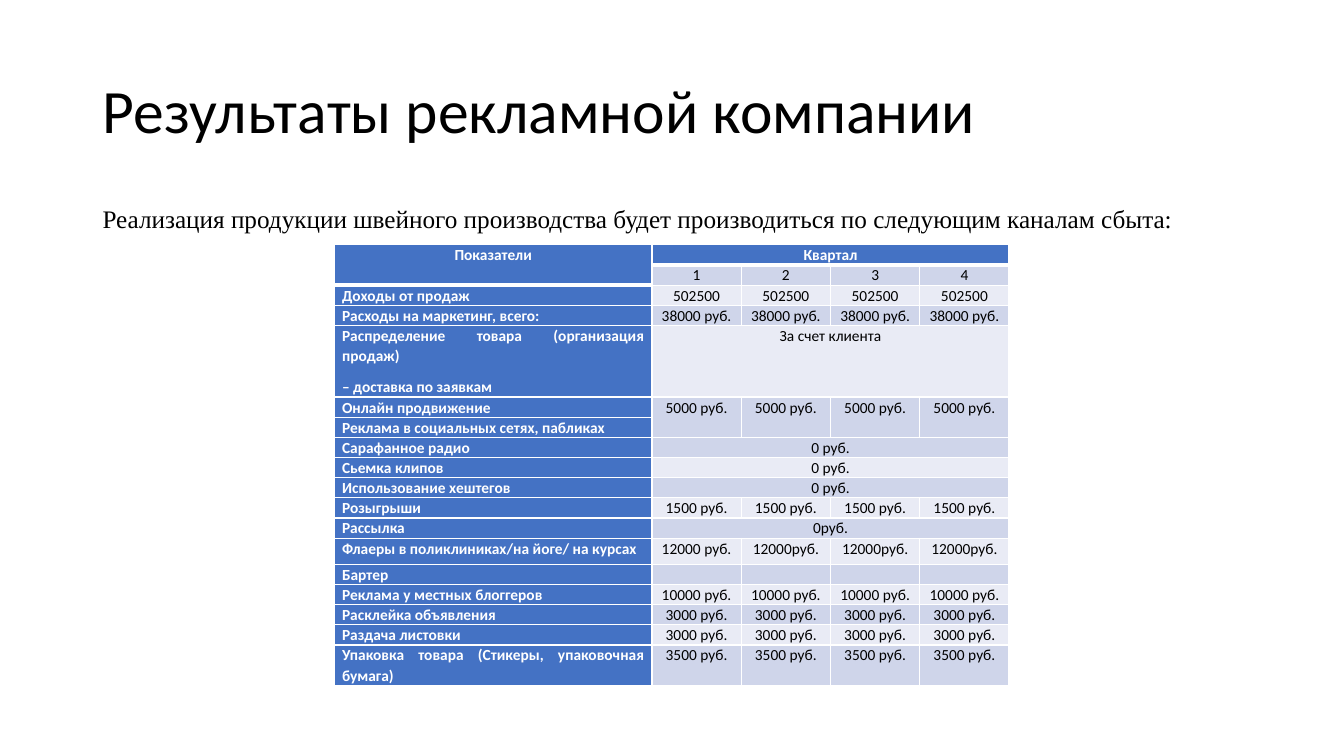
from lxml import etree
from pptx import Presentation
from pptx import util as u
from pptx.dml.color import RGBColor
from pptx.enum import text
from pptx.oxml import ns

WHITE, BLACK, BLUE = "FFFFFF", "000000", "4472C4"
BANDS = ("E9EBF5", "CFD5EA")
LEFT, CENTER, JUSTIFY = text.PP_ALIGN.LEFT, text.PP_ALIGN.CENTER, text.PP_ALIGN.JUSTIFY
QUARTERS = 4
ROW_HEIGHT = 0.5
TALL_ROWS = {4: 1.8, 12: 0.66, 17: 1}
CELL_PARAGRAPH = {"line_spacing": 1.06, "space_after": u.Pt(8)}
CELL_MARGINS = {"margin_left": u.Cm(0.19), "margin_right": u.Cm(0.19),
                "margin_top": 0, "margin_bottom": 0}

ROWS = [
    ("Показатели", ["Квартал"]),
    ("", ["1", "2", "3", "4"]),
    ("Доходы от продаж", ["502500"] * QUARTERS),
    ("Расходы на маркетинг, всего:", ["38000 руб."] * QUARTERS),
    ("Распределение товара (организация продаж)\n– доставка по заявкам", ["За счет клиента"]),
    ("Онлайн продвижение", ["5000 руб."] * QUARTERS),
    ("Реклама в социальных сетях, пабликах", []),
    ("Сарафанное радио", ["0 руб."]),
    ("Сьемка клипов", ["0 руб."]),
    ("Использование хештегов", ["0 руб."]),
    ("Розыгрыши", ["1500 руб."] * QUARTERS),
    ("Рассылка", ["0руб."]),
    ("Флаеры в поликлиниках/на йоге/ на курсах", ["12000 руб."] + ["12000руб."] * 3),
    ("Бартер", [""] * QUARTERS),
    ("Реклама у местных блоггеров", ["10000 руб."] * QUARTERS),
    ("Расклейка объявления", ["3000 руб."] * QUARTERS),
    ("Раздача листовки", ["3000 руб."] * QUARTERS),
    ("Упаковка товара (Стикеры, упаковочная бумага)", ["3500 руб."] * QUARTERS),
]


def color(value):
    return RGBColor.from_string(value)


def apply_format(target, values):
    for name, value in values.items():
        setattr(target, name, value)


def format_text(frame, paragraph_format, font_format, font_color):
    for paragraph in frame.paragraphs:
        apply_format(paragraph, paragraph_format)
        for run in paragraph.runs:
            apply_format(run.font, font_format)
            run.font.color.rgb = color(font_color)


def fill_placeholder(shape, content, box, paragraph_format, font_format):
    apply_format(shape, dict(zip(("left", "top", "width", "height"), map(u.Cm, box))))
    shape.text_frame.text = content
    shape.text_frame.auto_size = text.MSO_AUTO_SIZE.NONE
    format_text(shape.text_frame, {"alignment": LEFT, "line_spacing": 0.9, **paragraph_format},
                font_format, BLACK)


def remove_bullet(paragraph):
    properties = paragraph._p.get_or_add_pPr()
    apply_values = {"marL": "0", "indent": "0"}
    for name, value in apply_values.items():
        properties.set(name, value)
    etree.SubElement(properties, ns.qn("a:buNone"))


def add_borders(cell, bottom):
    properties = cell._tc.get_or_add_tcPr()
    for side, points in {"L": 1, "R": 1, "T": 1, "B": bottom}.items():
        line = etree.SubElement(properties, ns.qn(f"a:ln{side}"), w=str(u.Pt(points)))
        fill = etree.SubElement(line, ns.qn("a:solidFill"))
        etree.SubElement(fill, ns.qn("a:srgbClr"), val=WHITE)


def fill_cell(cell, content, row, column):
    heading = column == 0 or row == 0
    header_bottom = row == 0 or (row == 1 and column == 0)
    add_borders(cell, 3 if header_bottom else 1)
    cell.fill.solid()
    cell.fill.fore_color.rgb = color(BLUE if heading else BANDS[row % 2])
    apply_format(cell, CELL_MARGINS)
    cell.text = content
    alignment = JUSTIFY if column == 0 and row > 0 else CENTER
    format_text(cell.text_frame, {"alignment": alignment, **CELL_PARAGRAPH},
                {"name": "Calibri", "size": u.Pt(11), "bold": heading},
                WHITE if heading else BLACK)
    if not content:
        end = cell.text_frame.paragraphs[0]._p.get_or_add_endParaRPr()
        end.set("sz", "1100")


def add_results_table(slide):
    heights = [TALL_ROWS.get(row, ROW_HEIGHT) for row in range(len(ROWS))]
    widths = [8] + [2.25] * QUARTERS
    frame = slide.shapes.add_table(len(ROWS), len(widths), u.Cm(8.43), u.Cm(6.17),
                                   u.Cm(sum(widths)), u.Cm(sum(heights)))
    table = frame.table
    for column, width in zip(table.columns, widths):
        column.width = u.Cm(width)
    for row, height in zip(table.rows, heights):
        row.height = u.Cm(height)
    for row, (label, values) in enumerate(ROWS):
        contents = [label] + values + [""] * (QUARTERS - len(values))
        for column, content in enumerate(contents):
            fill_cell(table.cell(row, column), content, row, column)
        if len(values) == 1:
            table.cell(row, 1).merge(table.cell(row, QUARTERS))
        if not values:
            for column in range(1, QUARTERS + 1):
                table.cell(row - 1, column).merge(table.cell(row, column))
    table.cell(0, 0).merge(table.cell(1, 0))


def main():
    presentation = Presentation()
    presentation.slide_width, presentation.slide_height = u.Cm(33.87), u.Cm(19.05)
    slide = presentation.slides.add_slide(presentation.slide_layouts[1])
    fill_placeholder(slide.shapes.title, "Результаты рекламной компании",
                     (2.33, 1.01, 29.21, 3.68), {},
                     {"name": "Calibri", "size": u.Pt(44)})
    body = slide.placeholders[1]
    fill_placeholder(body, "Реализация продукции швейного производства будет "
                     "производиться по следующим каналам сбыта:",
                     (2.33, 5.07, 29.21, 12.09), {"space_before": u.Pt(10)},
                     {"name": "Times New Roman", "size": u.Pt(18)})
    remove_bullet(body.text_frame.paragraphs[0])
    add_results_table(slide)
    presentation.save("out.pptx")


if __name__ == "__main__":
    main()
